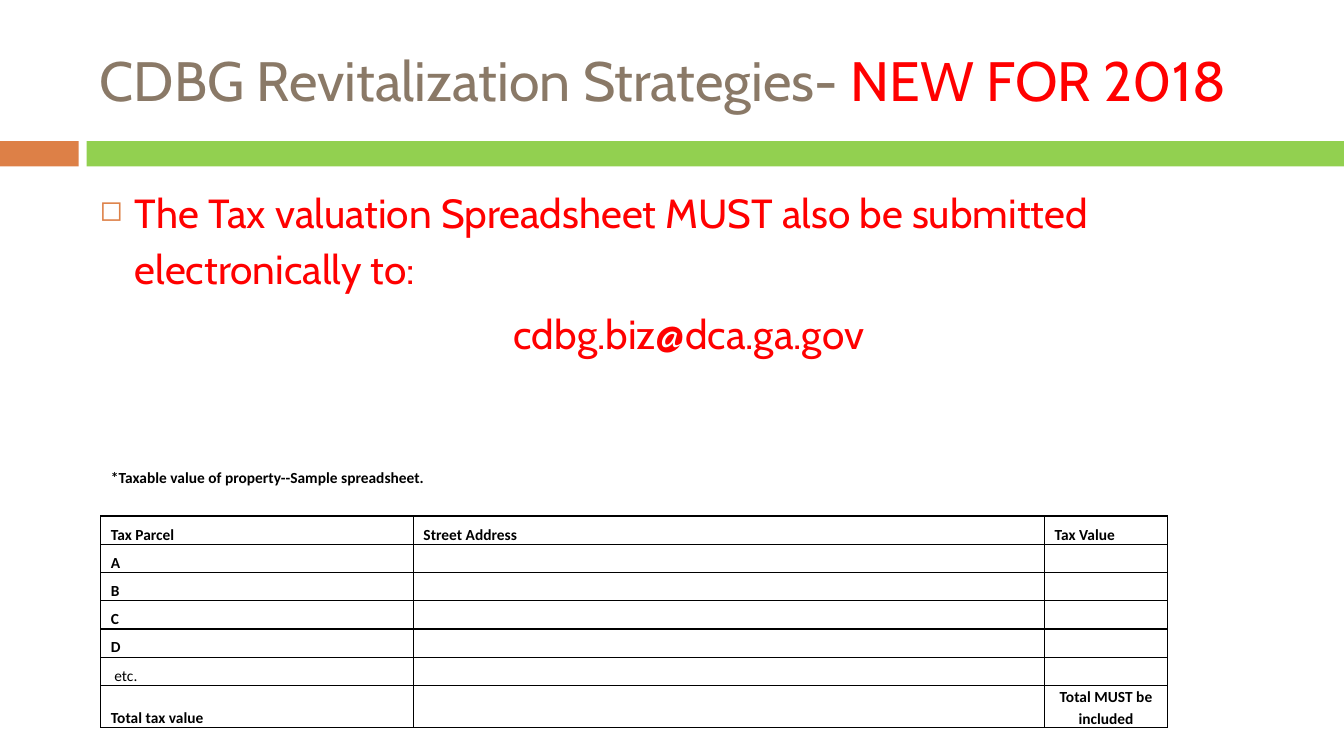
from dataclasses import dataclass

from lxml.etree import SubElement
from pptx import Presentation
from pptx.dml.color import RGBColor
from pptx.enum.shapes import MSO_SHAPE
from pptx.enum.text import MSO_ANCHOR, PP_ALIGN
from pptx.oxml import parse_xml
from pptx.oxml.ns import nsdecls, qn
from pptx.util import Inches, Pt


@dataclass(frozen=True)
class Theme:
    orange: str = "DD8047"
    green: str = "92D050"
    taupe: str = "8A7967"
    red: str = "FF0000"
    black: str = "000000"
    heading_font: str = "Cabin"
    table_font: str = "Calibri"
    title_size: float = 39.6
    body_size: float = 29
    table_size: float = 11


THEME = Theme()

COLUMN_WIDTHS = (3.1, 6.26, 1.22)
ROW_HEIGHT = 0.28
CAPTION = "*Taxable value of property--Sample spreadsheet."
ETC = "\N{NO-BREAK SPACE}etc."
TOTAL_NOTE = "Total MUST be included"
GRID_ROWS = [
    ("Tax Parcel", "Street Address", "Tax Value"),
    *((parcel, "", "") for parcel in ("A", "B", "C", "D", ETC)),
    ("Total tax value", "", TOTAL_NOTE),
]
TABLE_ROWS = [("", "", ""), (CAPTION, "", ""), ("", "", ""), *GRID_ROWS]
FIRST_GRID_ROW = len(TABLE_ROWS) - len(GRID_ROWS)


def add_bar(slide, left, top, width, height, color):
    sp = slide.shapes.add_shape(
        MSO_SHAPE.RECTANGLE, Inches(left), Inches(top), Inches(width), Inches(height))
    sp.shadow.inherit = False
    sp.fill.solid()
    sp.fill.fore_color.rgb = RGBColor.from_string(color)
    sp.line.fill.background()


def add_text_frame(slide, left, top, width, height, anchor):
    box = slide.shapes.add_textbox(
        Inches(left), Inches(top), Inches(width), Inches(height))
    tf = box.text_frame
    tf.word_wrap = True
    tf.vertical_anchor = anchor
    return tf


def add_run(p, text, font, size, color, bold=False):
    r = p.add_run()
    r.text = text
    r.font.name = font
    r.font.size = Pt(size)
    r.font.bold = bold
    r.font.color.rgb = RGBColor.from_string(color)


def set_bullet(p, char, color, percent, indent):
    pPr = p._p.get_or_add_pPr()
    pPr.set("marL", str(Inches(indent)))
    pPr.set("indent", str(-Inches(indent)))
    SubElement(SubElement(pPr, qn("a:buClr")), qn("a:srgbClr"), val=color)
    SubElement(pPr, qn("a:buSzPct"), val=str(percent * 1000))
    SubElement(pPr, qn("a:buChar"), char=char)


def set_borders(cell, sides):
    """Draw 1 pt lines on the given sides (letters of LRTB) and none elsewhere."""
    tcPr = cell._tc.get_or_add_tcPr()
    for i, side in enumerate("LRTB"):
        fill = "<a:noFill/>"
        if side in sides:
            fill = f'<a:solidFill><a:srgbClr val="{THEME.black}"/></a:solidFill>'
        tcPr.insert(i, parse_xml(
            f'<a:ln{side} {nsdecls("a")} w="{Pt(1)}">{fill}</a:ln{side}>'))


def fill_cell(cell, text, sides):
    cell.fill.background()
    cell.margin_left = cell.margin_right = Inches(0.1)
    cell.margin_top = cell.margin_bottom = 0
    cell.vertical_anchor = MSO_ANCHOR.BOTTOM
    p = cell.text_frame.paragraphs[0]
    p.line_spacing = 1.15
    if text == TOTAL_NOTE:
        p.alignment = PP_ALIGN.CENTER
    if text:
        add_run(p, text, THEME.table_font, THEME.table_size, THEME.black, text != ETC)
    else:
        SubElement(p._p, qn("a:endParaRPr"), sz=str(THEME.table_size * 100))
    set_borders(cell, sides)


def add_tax_table(slide, left, top):
    table = slide.shapes.add_table(
        len(TABLE_ROWS), len(COLUMN_WIDTHS), Inches(left), Inches(top),
        Inches(sum(COLUMN_WIDTHS)), Inches(ROW_HEIGHT * len(TABLE_ROWS))).table
    table.first_row = table.horz_banding = False
    for column, width in zip(table.columns, COLUMN_WIDTHS):
        column.width = Inches(width)
    for i, texts in enumerate(TABLE_ROWS):
        table.rows[i].height = Inches(ROW_HEIGHT)
        if i >= FIRST_GRID_ROW:
            sides = "LRTB"
        else:
            sides = "B" if i == FIRST_GRID_ROW - 1 else ""
        for j, text in enumerate(texts):
            fill_cell(table.cell(i, j), text, sides)
    for i in range(FIRST_GRID_ROW - 1):
        table.cell(i, 0).merge(table.cell(i, 1))


def add_title(slide):
    p = add_text_frame(slide, 0.89, 0.25, 11.89, 1.08, MSO_ANCHOR.MIDDLE).paragraphs[0]
    for text, color in (("CDBG Revitalization Strategies- ", THEME.taupe),
                        ("NEW FOR 2018", THEME.red)):
        add_run(p, text, THEME.heading_font, THEME.title_size, color)


def add_body(slide):
    tf = add_text_frame(slide, 0.89, 1.75, 11.89, 4.92, MSO_ANCHOR.TOP)
    instruction, address = tf.paragraphs[0], tf.add_paragraph()
    for p, text in (
            (instruction, "The Tax valuation Spreadsheet MUST also be submitted "
                          "electronically to:"),
            (address, "cdbg.biz@dca.ga.gov")):
        p.line_spacing = 1.14
        p.space_before = Pt(7)
        add_run(p, text, THEME.heading_font, THEME.body_size, THEME.red)
    set_bullet(instruction, "◻", THEME.orange, 70, 0.35)
    address.alignment = PP_ALIGN.CENTER


def main():
    prs = Presentation()
    prs.slide_width, prs.slide_height = Inches(13.33), Inches(7.5)
    slide = prs.slides.add_slide(prs.slide_layouts[6])
    add_bar(slide, 0, 1.4, 0.78, 0.25, THEME.orange)
    add_bar(slide, 0.86, 1.4, 12.47, 0.25, THEME.green)
    add_title(slide)
    add_tax_table(slide, 1, 4.28)
    add_body(slide)
    prs.save("out.pptx")


if __name__ == "__main__":
    main()
